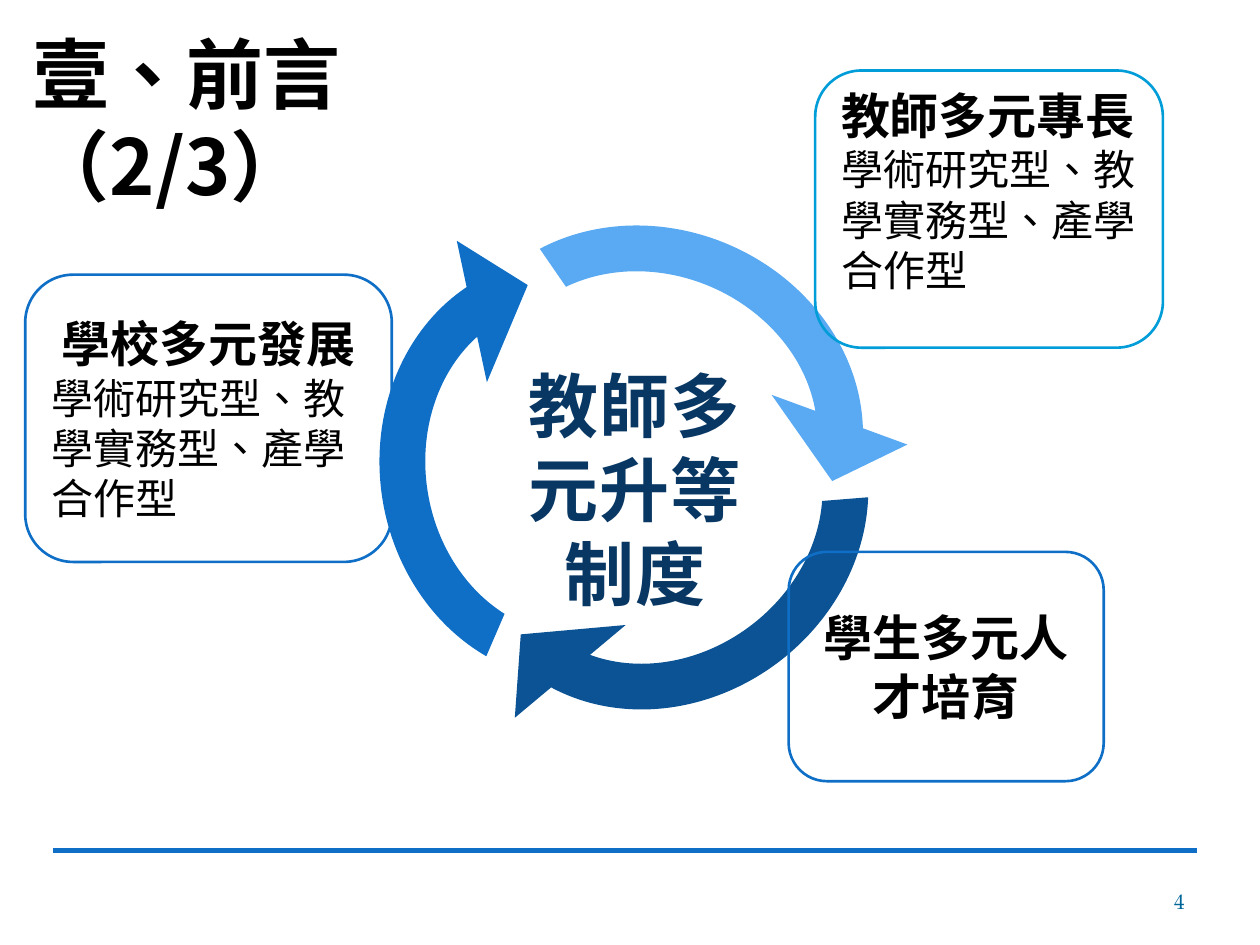
"""Build the slide on the multi-track teacher promotion system."""
from lxml import etree
from pptx import Presentation
from pptx.dml.color import RGBColor
from pptx.enum.shapes import MSO_CONNECTOR, MSO_SHAPE
from pptx.enum.text import MSO_ANCHOR as Anchor, MSO_AUTO_SIZE as AutoSize, PP_ALIGN as Align
from pptx.oxml.ns import qn
from pptx.util import Inches, Pt

CJK = "Noto Sans CJK SC"
BLUE = "0F6FC6"


def color(value):
    return RGBColor.from_string(value)


def add_text(paragraph, text, size, bold=False, font=CJK, fill="000000", align=Align.LEFT, spacing=None):
    paragraph.alignment = align
    run = paragraph.add_run()
    run.text = text
    run.font.size = Pt(size)
    run.font.bold = bold
    run.font.name = font
    run.font.color.rgb = color(fill)
    properties = run._r.get_or_add_rPr()
    properties.set("lang", "zh-TW")
    if spacing:
        properties.set("spc", str(spacing))
    east_asian = etree.Element(qn("a:ea"), typeface=CJK)
    properties.find(qn("a:latin")).addnext(east_asian)


presentation = Presentation()
presentation.slide_width = Inches(10)
presentation.slide_height = Inches(7.5)
slide = presentation.slides.add_slide(presentation.slide_layouts[5])
shapes = slide.shapes

title = shapes.title
title.left, title.top, title.width, title.height = map(Inches, (0.16, 0.16, 4.61, 0.84))
title.text_frame.vertical_anchor = Anchor.TOP
title.text_frame.word_wrap = True
title.text_frame.auto_size = AutoSize.SHAPE_TO_FIT_TEXT
add_text(title.text_frame.paragraphs[0], "壹、前言（2/3）", 44, bold=True)

footer_line = shapes.add_connector(
    MSO_CONNECTOR.STRAIGHT, Inches(0.42), Inches(6.75), Inches(9.5), Inches(6.75))
footer_line.line.color.rgb = color(BLUE)
footer_line.line.width = Pt(3)
etree.SubElement(footer_line._element.spPr, qn("a:effectLst"))

arrows = [
    (2.43, 1.85, 261.1, BLUE),
    (3.13, 1.43, 23.2, "59AAF2"),
    (3.21, 2.2, 143.2, "0B5394"),
]
for left, top, rotation, fill in arrows:
    arrow = shapes.add_shape(
        MSO_SHAPE.CIRCULAR_ARROW, Inches(left), Inches(top), Inches(4.14), Inches(3.75))
    for index, value in enumerate((0.097, 11.423, 202.702, 127.351, 0.153)):
        arrow.adjustments[index] = value
    arrow.rotation = rotation
    arrow.shadow.inherit = False
    arrow.fill.solid()
    arrow.fill.fore_color.rgb = color(fill)
    arrow.line.fill.background()

labels = [
    ((3.82, 2.82, 2.44, 2.12), "教師多元升等制度",
     dict(size=40, bold=True, font="Arial", fill="083763", align=Align.CENTER, spacing=50)),
    ((7.17, 6.95, 2.33, 0.4), "4",
     dict(size=12, font="TeX Gyre Pagella", fill="006699", align=Align.RIGHT)),
]
for position, text, text_format in labels:
    frame = shapes.add_textbox(*map(Inches, position)).text_frame
    frame.word_wrap = True
    frame.vertical_anchor = Anchor.MIDDLE
    add_text(frame.paragraphs[0], text, **text_format)

tracks = "學術研究型、教學實務型、產學合作型"
cards = [
    ((6.26, 4.38, 2.5, 1.82), BLUE, "學生多元人才培育", Align.CENTER, "", 0.05),
    ((0.2, 2.18, 2.91, 2.28), BLUE, "學校多元發展", Align.CENTER, tracks, 0.05),
    ((6.47, 0.56, 2.76, 2.2), "009DD9", "教師多元專長", Align.LEFT, tracks, 0.35),
]
for position, outline, heading, align, detail, bottom_margin in cards:
    card = shapes.add_shape(MSO_SHAPE.ROUNDED_RECTANGLE, *map(Inches, position))
    card.shadow.inherit = False
    card.fill.background()
    card.line.color.rgb = color(outline)
    card.line.width = Pt(1.5)
    frame = card.text_frame
    frame.word_wrap = True
    frame.vertical_anchor = Anchor.MIDDLE
    frame.margin_bottom = Inches(bottom_margin)
    paragraph = frame.paragraphs[0]
    add_text(paragraph, heading, 28, bold=True, align=align)
    if detail:
        if align == Align.CENTER:
            paragraph = frame.add_paragraph()
        add_text(paragraph, detail, 24)

presentation.save("out.pptx")
